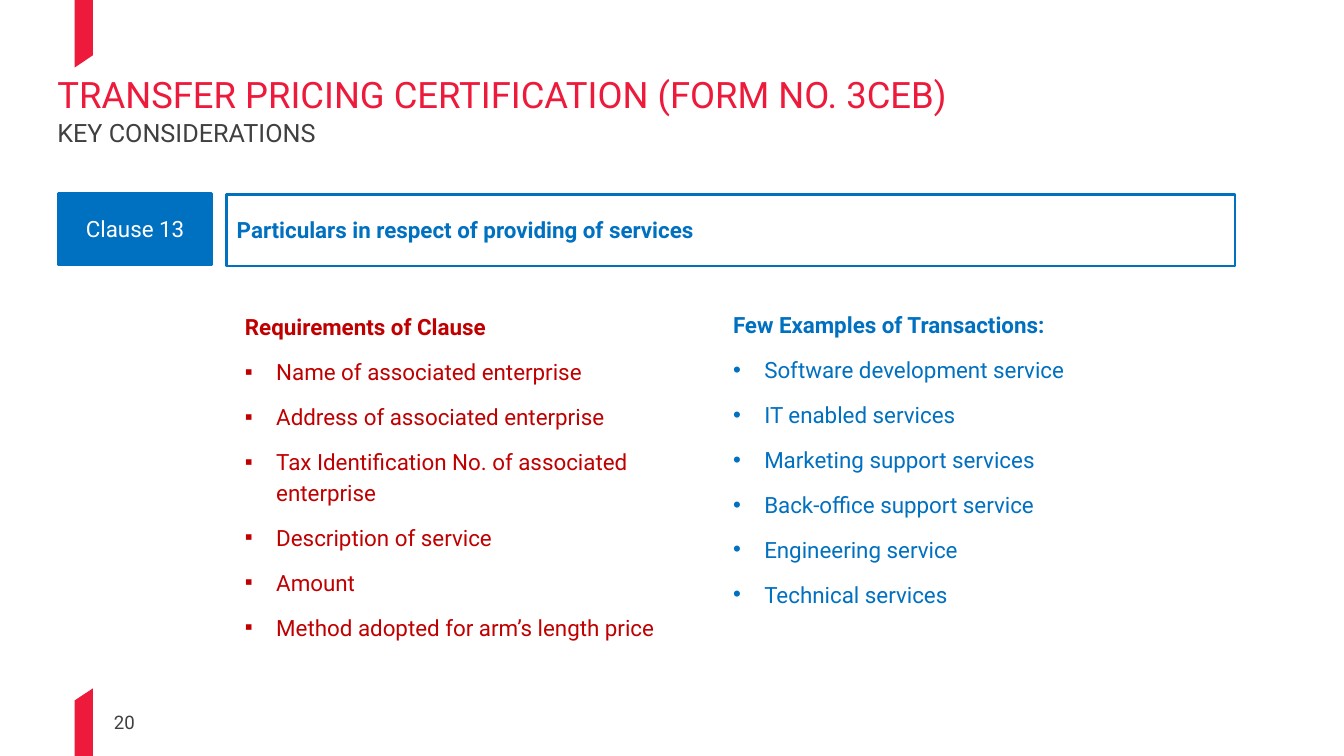
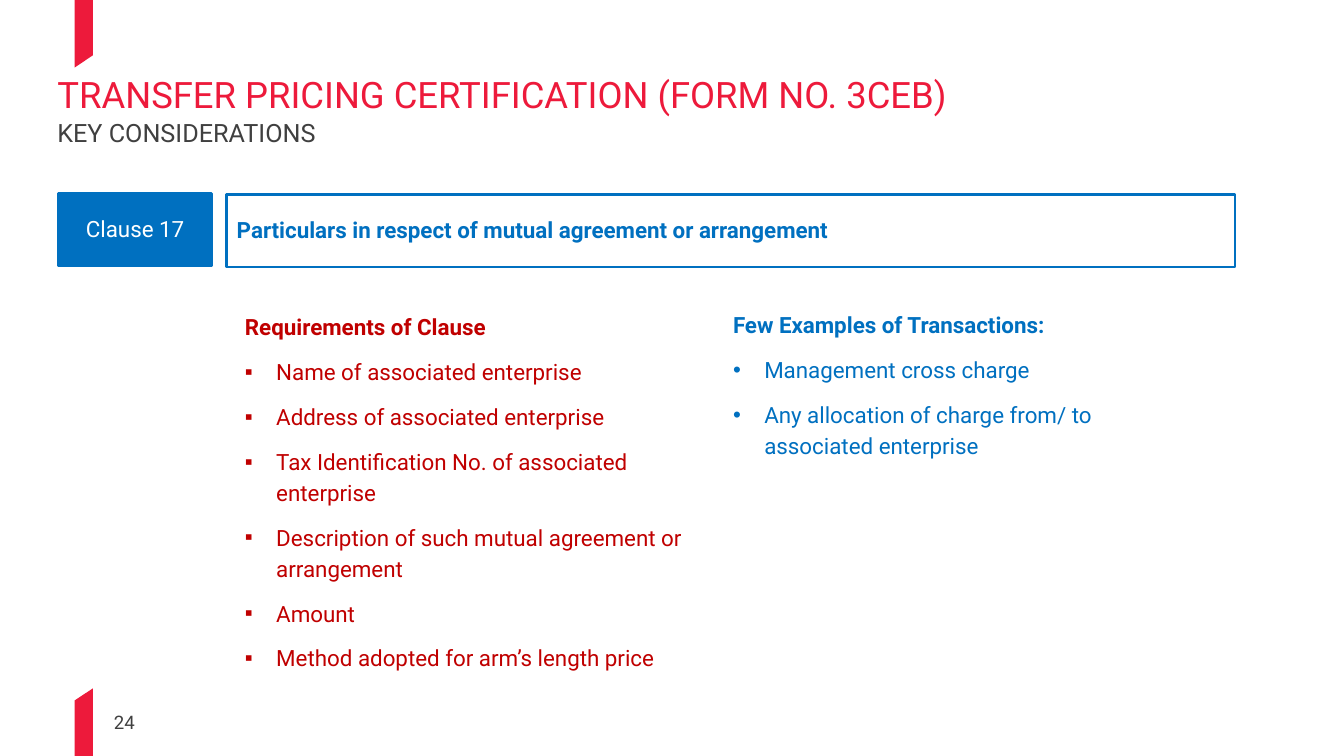
from lxml import etree
from pptx import Presentation
from pptx import util as u
from pptx.dml.color import RGBColor
from pptx.enum import shapes as s, text as t
from pptx.oxml.ns import qn

PX = 9144  # EMU in one px, 100 px to the inch
FONT = "Roboto"
RED = RGBColor(0xED, 0x1A, 0x3B)
DARK = RGBColor(0xC0, 0x00, 0x00)
BLUE = RGBColor(0x00, 0x70, 0xC0)
GREY = RGBColor(0x40, 0x40, 0x40)
WHITE = RGBColor(0xFF, 0xFF, 0xFF)

TITLE = "TRANSFER PRICING CERTIFICATION (FORM NO. 3CEB)"
SUB = "KEY CONSIDERATIONS"
FLAG = [(0, 12), (0, 67), (18, 67), (18, 0)]

PAGES = [
    dict(
        page="20", clause="Clause 13", high=71,
        topic="Particulars in respect of providing of services",
        about="Description of service",
        cases=["Software development service", "IT enabled services",
               "Marketing support services", "Back-office support service",
               "Engineering service", "Technical services"],
    ),
    dict(
        page="24", clause="Clause 17", high=72,
        topic="Particulars in respect of mutual agreement or arrangement",
        about="Description of such mutual agreement or arrangement",
        cases=["Management cross charge",
               "Any allocation of charge from/ to associated enterprise"],
    ),
]


def emu(box):
    return [u.Emu(v * PX) for v in box]


def place(shape, box):
    shape.left, shape.top, shape.width, shape.height = emu(box)


def style(para, size, color, bold=False):
    font = para.font
    font.name, font.size, font.bold = FONT, u.Pt(size), bold
    font.color.rgb = color


def space(para, line, before=0, after=0):
    para.line_spacing = line
    para.space_before, para.space_after = u.Pt(before), u.Pt(after)


def setup(frame, anchor):
    frame.word_wrap = True
    frame.auto_size = t.MSO_AUTO_SIZE.NONE
    frame.vertical_anchor = anchor


def bullet(para, mark):
    """Give the paragraph a hanging bullet, or none without a mark."""
    props = para._p.get_or_add_pPr()
    step = 31 * PX if mark else 0
    props.set("marL", str(step))
    props.set("indent", str(-step))
    if mark:
        etree.SubElement(props, qn("a:buFont")).set("typeface", "Arial")
        etree.SubElement(props, qn("a:buChar")).set("char", mark)
    else:
        etree.SubElement(props, qn("a:buNone"))


def flag(slide, left, top, turn=False):
    """Red slanted band; turned, it hangs from the top edge."""
    dots = [(18 - x, 67 - y) if turn else (x, y) for x, y in FLAG]
    dots = [(left + x, top + y) for x, y in dots]
    path = slide.shapes.build_freeform(*dots[0], scale=PX)
    path.add_line_segments(dots[1:])
    band = path.convert_to_shape()
    band.shadow.inherit = False
    band.fill.solid()
    band.fill.fore_color.rgb = RED
    band.line.fill.background()


def footer(slide, page):
    flag(slide, 74, 683)
    flag(slide, 74, 0, turn=True)
    frame = slide.shapes.add_textbox(*emu((113, 705, 61, 22))).text_frame
    setup(frame, t.MSO_ANCHOR.BOTTOM)
    frame.margin_left = frame.margin_right = 0
    frame.margin_top = frame.margin_bottom = 0
    frame.text = page
    style(frame.paragraphs[0], 13.3, GREY)


def header(slide, left, top, width):
    title = slide.shapes.title
    place(title, (left, top, width, 35))
    sub = slide.shapes.add_textbox(*emu((left, top + 42, width, 24)))
    for shape, words, size, color in ((title, TITLE, 26, RED),
                                      (sub, SUB, 18, GREY)):
        frame = shape.text_frame
        setup(frame, t.MSO_ANCHOR.TOP)
        frame.text = words
        para = frame.paragraphs[0]
        para.alignment = t.PP_ALIGN.LEFT
        space(para, 0.8)
        style(para, size, color)


def panel(slide, box, words, align, solid):
    shape = slide.shapes.add_shape(s.MSO_SHAPE.RECTANGLE, *emu(box))
    shape.shadow.inherit = False
    shape.line.color.rgb, shape.line.width = BLUE, u.Pt(2)
    if solid:
        shape.fill.solid()
        shape.fill.fore_color.rgb = BLUE
    else:
        shape.fill.background()
    frame = shape.text_frame
    setup(frame, t.MSO_ANCHOR.MIDDLE)
    frame.text = words
    para = frame.paragraphs[0]
    para.alignment = align
    space(para, u.Pt(18), 6, 6)
    style(para, 16, WHITE if solid else BLUE, not solid)


def banner(slide, left, top, high, clause, topic):
    panel(slide, (left + 167, top + 1, 1000, high), topic,
          t.PP_ALIGN.JUSTIFY, False)
    panel(slide, (left, top, 152, high), clause, t.PP_ALIGN.CENTER, True)


def column(shape, box, head, items, mark, color):
    """Bold heading with a bulleted list below it."""
    place(shape, box)
    frame = shape.text_frame
    setup(frame, t.MSO_ANCHOR.TOP)
    frame.text = "\n".join([head] + items)
    for i, para in enumerate(frame.paragraphs):
        space(para, 1.15, after=10)
        bullet(para, mark if i else None)
        style(para, 16, color, bold=i == 0)


def build(deck, page, clause, high, topic, about, cases):
    slide = deck.slides.add_slide(deck.slide_layouts[3])
    needs = ["Name of associated enterprise",
             "Address of associated enterprise",
             "Tax Identification No. of associated enterprise",
             about, "Amount", "Method adopted for arm’s length price"]
    footer(slide, page)
    header(slide, 47, 75, 1241)
    banner(slide, 58, 192, high, clause, topic)
    hold = slide.placeholders
    column(hold[1], (233, 302, 467, 370), "Requirements of Clause",
           needs, "▪", DARK)
    column(hold[2], (717, 300, 400, 308), "Few Examples of Transactions:",
           cases, "•", BLUE)


def main():
    deck = Presentation()
    deck.slide_width, deck.slide_height = emu((1333, 750))
    for page in PAGES:
        build(deck, **page)
    deck.save("out.pptx")


if __name__ == "__main__":
    main()
